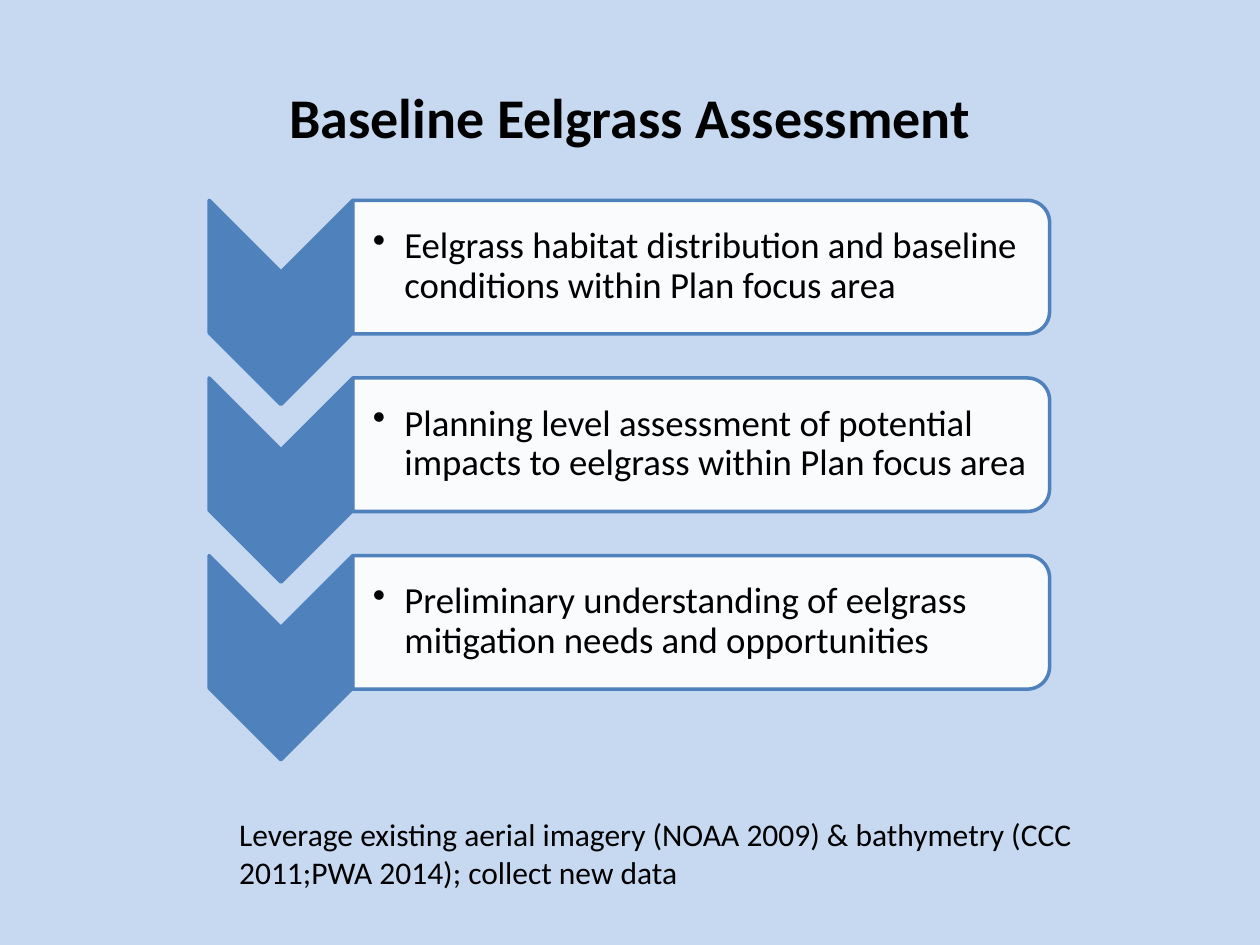
from lxml import etree
from pptx import Presentation
from pptx.dml.color import RGBColor
from pptx.enum.shapes import MSO_SHAPE
from pptx.enum.text import MSO_ANCHOR, PP_ALIGN
from pptx.oxml.ns import qn
from pptx.util import Inches, Pt

CHEVRON = MSO_SHAPE.CHEVRON
ROUND = MSO_SHAPE.ROUND_2_SAME_RECTANGLE
MIDDLE, TOP = MSO_ANCHOR.MIDDLE, MSO_ANCHOR.TOP
CENTER, LEFT = PP_ALIGN.CENTER, PP_ALIGN.LEFT
BLUE, WHITE, BLACK, SKY = "4F81BD", "FFFFFF", "000000", "C6D9F1"

TITLE = "Baseline Eelgrass Assessment"
STEPS = [
    "Eelgrass habitat distribution and baseline conditions within Plan focus area",
    "Planning level assessment of potential impacts to eelgrass within Plan focus area",
    "Preliminary understanding of eelgrass mitigation needs and opportunities",
]
NOTE = ("Leverage existing aerial imagery (NOAA 2009) & bathymetry "
        "(CCC 2011;PWA 2014); collect new data")


def color(code):
    return RGBColor.from_string(code)


def add_text(slide, box, text, size, bold=False, align=LEFT, anchor=TOP):
    frame = slide.shapes.add_textbox(*map(Inches, box)).text_frame
    frame.word_wrap = True
    frame.vertical_anchor = anchor
    para = frame.paragraphs[0]
    para.text = text
    para.alignment = align
    font = para.font
    font.name, font.size, font.bold = "Calibri", Pt(size), bold
    font.color.rgb = color(BLACK)
    return frame


def add_turned(slide, kind, box, fill, alpha=100):
    """Add a shape turned clockwise by 90 degrees that fills the box."""
    left, top, wide, high = box
    shift = (wide - high) / 2
    turned = (left + shift, top - shift, high, wide)
    shape = slide.shapes.add_shape(kind, *map(Inches, turned))
    shape.rotation = 90
    shape.shadow.inherit = False
    shape.fill.solid()
    shape.fill.fore_color.rgb = color(fill)
    shape.line.color.rgb = color(BLUE)
    shape.line.width = Pt(2)
    if alpha < 100:
        tone = shape.fill._xPr.find(qn("a:solidFill"))[0]
        etree.SubElement(tone, qn("a:alpha")).set("val", str(alpha * 1000))


def add_bullet(para, indent):
    props = para._p.get_or_add_pPr()
    props.set("marL", str(Inches(indent)))
    props.set("indent", str(-Inches(indent)))
    mark = etree.Element(qn("a:buChar"))
    mark.set("char", "•")
    # Bullets stand before the default run properties.
    props.insert_element_before(mark, "a:tabLst", "a:defRPr", "a:extLst")


def add_step(slide, box, text):
    left, top, wide, high = box
    arrow = 1.14
    bar, body = left + arrow, wide - arrow
    add_turned(slide, CHEVRON, (left, top, arrow, high), BLUE)
    add_turned(slide, ROUND, (bar, top, body, 1.06), WHITE, 90)
    frame = add_text(slide, (bar, top + 0.05, body - 0.05, 0.95), text, 21,
                     anchor=MIDDLE)
    frame.margin_left = Inches(0.16)
    frame.margin_right = frame.margin_top = frame.margin_bottom = Inches(0.01)
    para = frame.paragraphs[0]
    para.line_spacing = 0.9
    add_bullet(para, 0.25)


def add_list(slide, box, steps, pitch):
    left, top, wide, high = box
    part = high - pitch * (len(steps) - 1)
    for row, text in enumerate(steps):
        add_step(slide, (left, top + row * pitch, wide, part), text)


def main():
    deck = Presentation()
    deck.slide_width, deck.slide_height = Inches(10), Inches(7.5)
    slide = deck.slides.add_slide(deck.slide_layouts[6])
    slide.background.fill.solid()
    slide.background.fill.fore_color.rgb = color(SKY)
    add_text(slide, (0.5, 0.3, 9, 1.25), TITLE, 32, True, CENTER, MIDDLE)
    add_list(slide, (1.66, 1.59, 6.67, 4.44), STEPS, 1.41)
    add_text(slide, (1.8, 6.42, 7, 0.71), NOTE, 18)
    deck.save("out.pptx")


if __name__ == "__main__":
    main()
